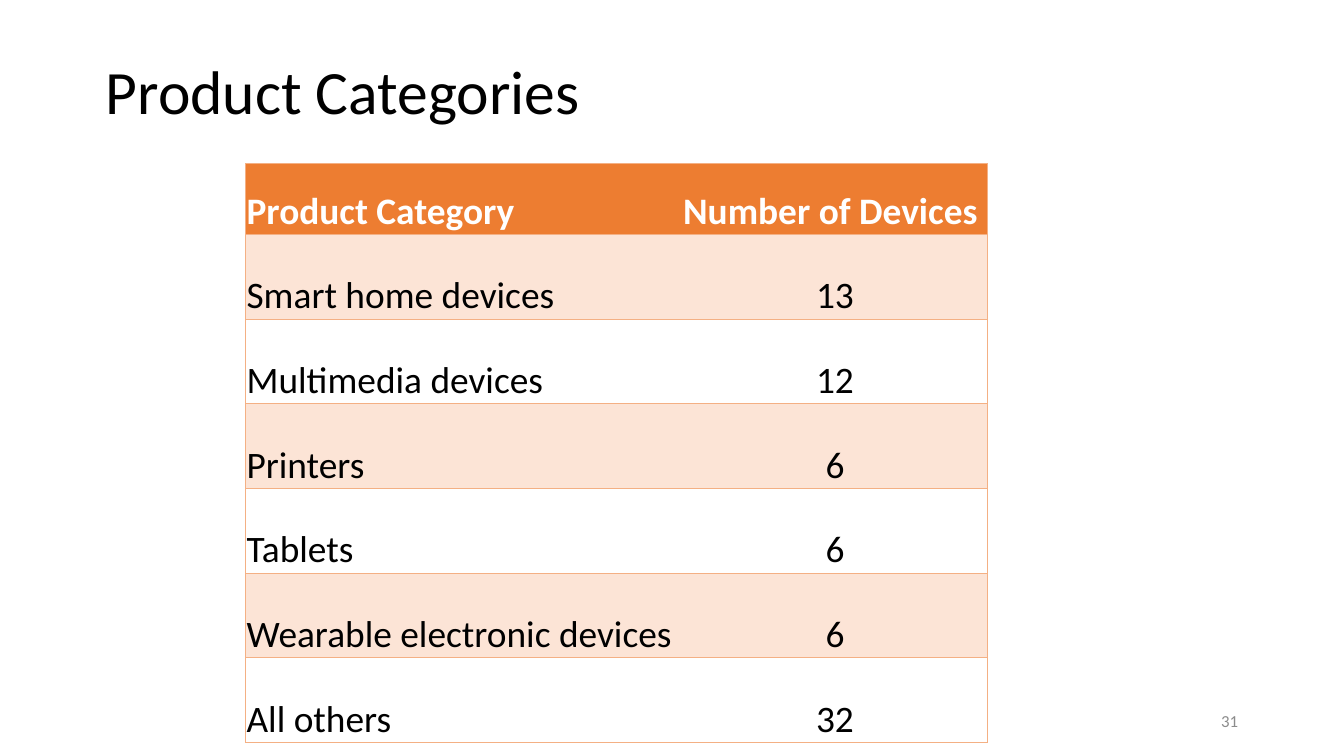
"""Build the product categories slide with a two-column table."""
from lxml import etree
from pptx import Presentation
from pptx import util as u
from pptx.dml import color
from pptx.enum import text
from pptx.oxml import ns

COLORS = {"black": "000000", "white": "FFFFFF", "gray": "8C8C8C",
          "header": "ED7D31", "band": "FCE4D6", "border": "F4B084"}
ROWS = [("Product Category", "Number of Devices"),
        ("Smart home devices", "13"),
        ("Multimedia devices", "12"),
        ("Printers", "6"),
        ("Tablets", "6"),
        ("Wearable electronic devices", "6"),
        ("All others", "32")]


def write(text_frame, content, size, color_name, alignment, bold=False):
    text_frame.text = content
    paragraph = text_frame.paragraphs[0]
    paragraph.alignment = alignment
    font = paragraph.runs[0].font
    font.name, font.size, font.bold = "Calibri", u.Pt(size), bold
    font.color.rgb = color.RGBColor.from_string(COLORS[color_name])


def add_border(cell, side, visible):
    properties = cell._tc.get_or_add_tcPr()
    line = etree.SubElement(properties, ns.qn(f"a:ln{side}"), w=str(u.Pt(0.5)))
    if visible:
        fill = etree.SubElement(line, ns.qn("a:solidFill"))
        etree.SubElement(fill, ns.qn("a:srgbClr"), val=COLORS["border"])
    else:
        etree.SubElement(line, ns.qn("a:noFill"))


presentation = Presentation()
presentation.slide_width, presentation.slide_height = u.Cm(25.4), u.Cm(14.29)
slide = presentation.slides.add_slide(presentation.slide_layouts[6])

LEFT, CENTER, RIGHT = text.PP_ALIGN.LEFT, text.PP_ALIGN.CENTER, text.PP_ALIGN.RIGHT
labels = [("Product Categories", (1.75, 0.4, 21.9, 2.77), 33, "black", LEFT),
          ("31", (17.93, 13.24, 5.72, 0.76), 9, "gray", RIGHT)]
for content, box, size, color_name, alignment in labels:
    shape = slide.shapes.add_textbox(*map(u.Cm, box))
    shape.text_frame.word_wrap = True
    shape.text_frame.vertical_anchor = text.MSO_ANCHOR.MIDDLE
    write(shape.text_frame, content, size, color_name, alignment)
slide.shapes[0].text_frame.paragraphs[0].line_spacing = 0.9

frame = slide.shapes.add_table(len(ROWS), 2, *map(u.Cm, (4.64, 3.09, 14.03, 10.92)))
table = frame.table
table.first_row = table.horz_banding = False
for column, width in zip(table.columns, (8.25, 5.78)):
    column.width = u.Cm(width)

for row_index, values in enumerate(ROWS):
    is_header = row_index == 0
    table.rows[row_index].height = u.Cm(1.34 if is_header else 1.6)
    for column_index, value in enumerate(values):
        cell = table.cell(row_index, column_index)
        cell.margin_left = cell.margin_right = cell.margin_top = u.Cm(0.02)
        cell.margin_bottom = 0
        cell.vertical_anchor = text.MSO_ANCHOR.BOTTOM
        centered = column_index == 1 and not is_header
        write(cell.text_frame, value, 20, "white" if is_header else "black",
              CENTER if centered else LEFT, is_header)
        for side in "LRTB":
            inner = side == "LR"[1 - column_index]
            add_border(cell, side, not inner)
        if is_header or row_index % 2:
            cell.fill.solid()
            fill_name = "header" if is_header else "band"
            cell.fill.fore_color.rgb = color.RGBColor.from_string(COLORS[fill_name])
        else:
            cell.fill.background()

presentation.save("out.pptx")
